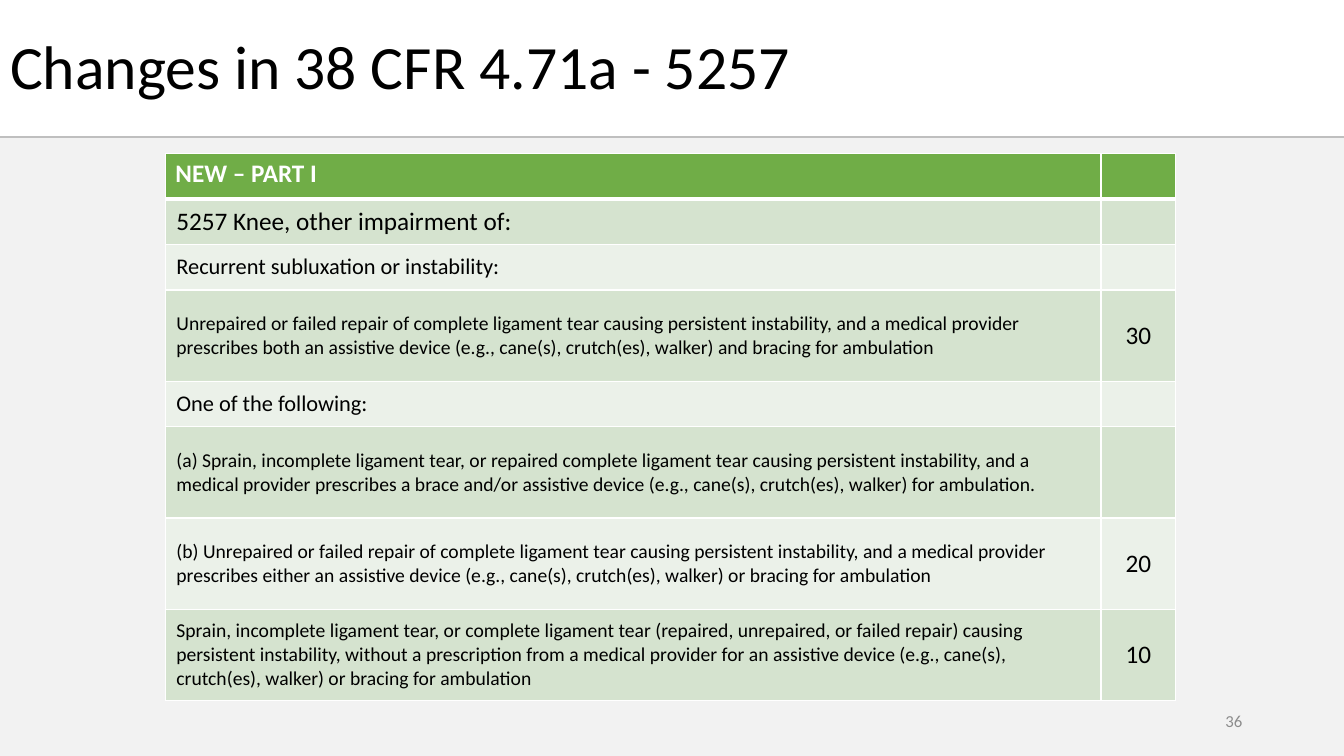
import pptx
import pptx.dml.color
import pptx.enum.shapes
import pptx.enum.text
import pptx.oxml.ns
import pptx.util
from dataclasses import dataclass
from lxml import etree

TITLE = "Changes in 38 CFR 4.71a - 5257"
PAGE = "36"
# Level, criterion, rating, height in row units
CRITERIA = [
    ("header", "NEW – PART I", "", 1),
    ("code", "5257 Knee, other impairment of:", "", 1),
    ("group", "Recurrent subluxation or instability:", "", 1),
    ("detail", "Unrepaired or failed repair of complete ligament tear causing persistent "
     "instability, and a medical provider prescribes both an assistive device "
     "(e.g., cane(s), crutch(es), walker) and bracing for ambulation", "30", 2),
    ("group", "One of the following:", "", 1),
    ("detail", "(a) Sprain, incomplete ligament tear, or repaired complete ligament tear "
     "causing persistent instability, and a medical provider prescribes a brace and/or "
     "assistive device (e.g., cane(s), crutch(es), walker) for ambulation.", "", 2),
    ("detail", "(b) Unrepaired or failed repair of complete ligament tear causing persistent "
     "instability, and a medical provider prescribes either an assistive device "
     "(e.g., cane(s), crutch(es), walker) or bracing for ambulation", "20", 2),
    ("detail", "Sprain, incomplete ligament tear, or complete ligament tear (repaired, "
     "unrepaired, or failed repair) causing persistent instability, without a prescription "
     "from a medical provider for an assistive device (e.g., cane(s), crutch(es), walker) "
     "or bracing for ambulation", "10", 2),
]


@dataclass(frozen=True)
class Theme:
    font: str = "Calibri"
    text: str = "000000"
    white: str = "FFFFFF"
    page: str = "8C8C8C"
    band: str = "F2F2F2"
    rule: str = "BFBFBF"
    header: str = "70AD47"
    stripes: tuple = ("EBF1E9", "D5E3CF")
    title_size: int = 44
    page_size: int = 12
    rating_size: int = 18


THEME = Theme()
LEVEL_SIZES = {"header": 18, "code": 18, "group": 16, "detail": 14}
WIDTH, HEIGHT = 13.33, 7.5
RULE_Y = 1.36
TABLE_LEFT, TABLE_TOP, TABLE_HEIGHT = 1.64, 1.52, 5.43
COLUMNS = (9.28, 0.74)
THIN, THICK = 1, 3

inches = pptx.util.Inches
rgb = pptx.dml.color.RGBColor.from_string
MIDDLE = pptx.enum.text.MSO_ANCHOR.MIDDLE
ALIGN = pptx.enum.text.PP_ALIGN


def write(frame, words, size, color, align=ALIGN.LEFT, bold=False):
    frame.text = words
    paragraph = frame.paragraphs[0]
    paragraph.alignment = align
    font = paragraph.runs[0].font if words else paragraph.font
    font.name, font.size, font.bold = THEME.font, pptx.util.Pt(size), bold
    font.color.rgb = rgb(color)
    return paragraph


def set_borders(cell, top, bottom):
    properties = cell._tc.get_or_add_tcPr()
    for side, width in (("L", THIN), ("R", THIN), ("T", top), ("B", bottom)):
        edge = etree.SubElement(properties, pptx.oxml.ns.qn(f"a:ln{side}"),
                                w=str(pptx.util.Pt(width)))
        fill = etree.SubElement(edge, pptx.oxml.ns.qn("a:solidFill"))
        etree.SubElement(fill, pptx.oxml.ns.qn("a:srgbClr"), val=THEME.white)


def add_background(slide):
    band = slide.shapes.add_shape(
        pptx.enum.shapes.MSO_SHAPE.RECTANGLE, 0, inches(RULE_Y),
        inches(WIDTH), inches(HEIGHT - RULE_Y))
    band.shadow.inherit = False
    band.fill.solid()
    band.fill.fore_color.rgb = rgb(THEME.band)
    band.line.fill.background()
    rule = slide.shapes.add_connector(
        pptx.enum.shapes.MSO_CONNECTOR.STRAIGHT, 0, inches(RULE_Y),
        inches(WIDTH), inches(RULE_Y))
    rule.line.color.rgb = rgb(THEME.rule)
    rule.line.width = pptx.util.Pt(1.5)
    etree.SubElement(rule._element.spPr, pptx.oxml.ns.qn("a:effectLst"))


def add_title(slide):
    title = slide.shapes.title
    title.left, title.top = 0, inches(0.15)
    title.width, title.height = inches(8.83), inches(1.07)
    title.text_frame.vertical_anchor = MIDDLE
    write(title.text_frame, TITLE, THEME.title_size, THEME.text).line_spacing = 0.9


def add_criteria(slide):
    unit = TABLE_HEIGHT / sum(units for *_, units in CRITERIA)
    table = slide.shapes.add_table(
        len(CRITERIA), len(COLUMNS), inches(TABLE_LEFT), inches(TABLE_TOP),
        inches(sum(COLUMNS)), inches(TABLE_HEIGHT)).table
    for column, width in zip(table.columns, COLUMNS):
        column.width = inches(width)
    for index, (level, criterion, rating, units) in enumerate(CRITERIA):
        table.rows[index].height = inches(unit * units)
        header = level == "header"
        color = THEME.white if header else THEME.text
        criterion_cell, rating_cell = table.rows[index].cells
        for cell in (criterion_cell, rating_cell):
            set_borders(cell, THICK if index == 1 else THIN, THICK if header else THIN)
            cell.fill.solid()
            cell.fill.fore_color.rgb = rgb(THEME.header if header
                                           else THEME.stripes[index % 2])
            if not header:
                cell.vertical_anchor = MIDDLE
                cell.margin_left = cell.margin_right = inches(0.11)
                cell.margin_top = cell.margin_bottom = inches(0.06)
        write(criterion_cell.text_frame, criterion, LEVEL_SIZES[level], color, bold=header)
        write(rating_cell.text_frame, rating, THEME.rating_size, color, ALIGN.CENTER)


def add_page_number(slide):
    page = slide.shapes.add_textbox(inches(9.42), inches(6.95), inches(3), inches(0.4))
    page.text_frame.word_wrap = True
    page.text_frame.vertical_anchor = MIDDLE
    write(page.text_frame, PAGE, THEME.page_size, THEME.page, ALIGN.RIGHT)


def main():
    deck = pptx.Presentation()
    deck.slide_width, deck.slide_height = inches(WIDTH), inches(HEIGHT)
    slide = deck.slides.add_slide(deck.slide_layouts.get_by_name("Title Only"))
    add_background(slide)
    add_title(slide)
    add_criteria(slide)
    add_page_number(slide)
    deck.save("out.pptx")


if __name__ == "__main__":
    main()
